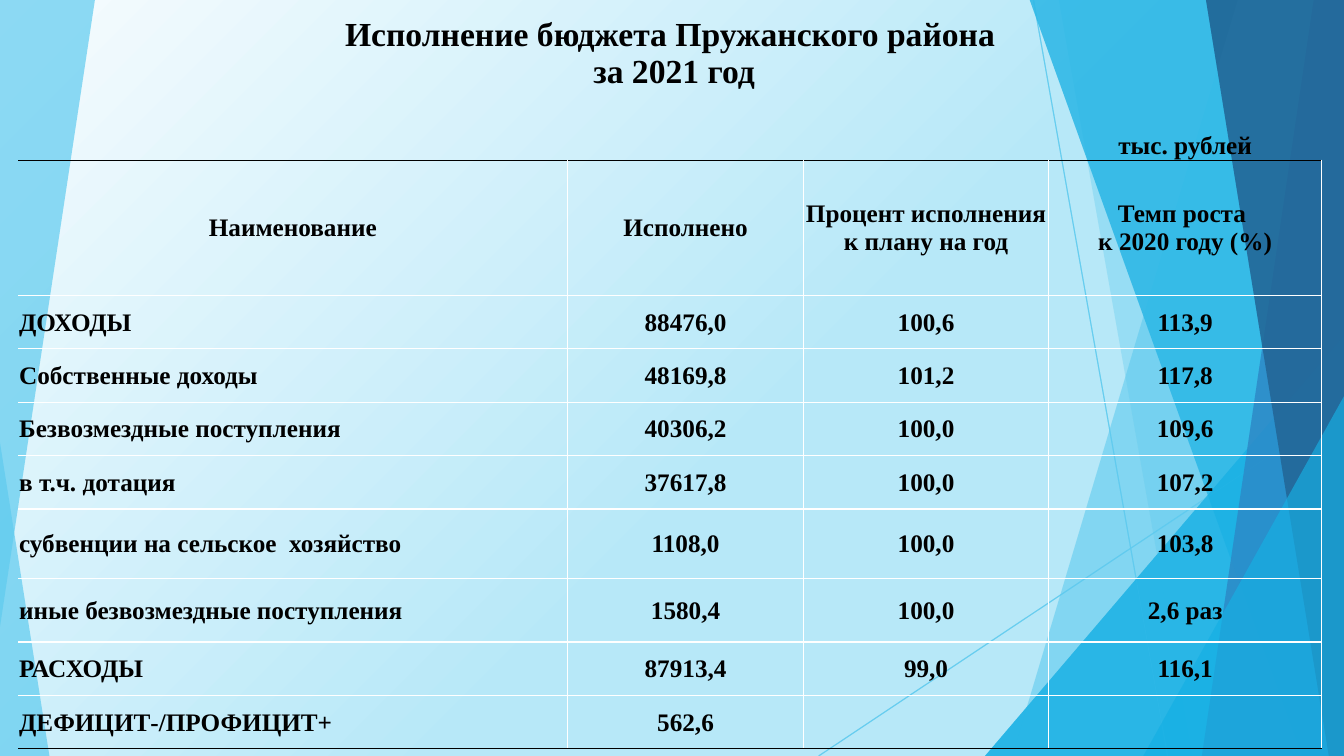
from lxml import etree
from pptx import Presentation
from pptx.dml.color import RGBColor
from pptx.enum import shapes, text
from pptx.oxml.ns import qn
from pptx.util import Inches, Pt

W, H, TOP = 13.33, 7.5, -0.01
FONT, BLACK, WHITE = "Times New Roman", "000000", "FFFFFF"


def paint(fill, colour, alpha=100):
    """Solid fill with an opacity in percent."""
    fill.solid()
    fill.fore_color.rgb = RGBColor.from_string(colour)
    if alpha < 100:
        clr = fill._xPr.find(".//" + qn("a:srgbClr"))
        etree.SubElement(clr, qn("a:alpha"), val=str(alpha * 1000))


def finish(sp, colour, alpha):
    paint(sp.fill, colour, alpha)
    sp.line.fill.background()
    sp.shadow.inherit = False


prs = Presentation()
prs.slide_width, prs.slide_height = Inches(W), Inches(H)
s = prs.slides.add_slide(prs.slide_layouts[6])

bg = s.background.fill
bg.gradient()
bg.gradient_angle = 315
for stop, (pos, colour) in zip(bg.gradient_stops, [(0, "F7FCFE"), (0.57, "B7E8F8")]):
    stop.position = pos
    stop.color.rgb = RGBColor.from_string(colour)

# Left edge
sp = s.shapes.add_shape(shapes.MSO_SHAPE.ISOSCELES_TRIANGLE, 0, Inches(4.39), Inches(0.49), Inches(3.11))
sp.adjustments[0] = 0
finish(sp, "5FCBEF", 70)
fb = s.shapes.build_freeform(0, 0)
fb.add_line_segments([(Inches(x), Inches(y)) for x, y in [(0.94, TOP), (0.94, 0.01), (0, 6.22)]])
finish(fb.convert_to_shape(), "5FCBEF", 70)

# Right side: panels give top and bottom x, triangles give left and top;
# all reach the right and bottom edges of the slide
facets = [
    ("panel", 12.28, 10.04, "5FCBEF", 36),
    ("panel", 10.5, 11.83, "5FCBEF", 20),
    ("triangle", 9.77, 3.33, "17B0E4", 66),
    ("panel", 10.21, 12.91, "17B0E4", 50),
    ("panel", 13.03, 11.92, "2E83C3", 70),
    ("panel", 11.96, 13.18, "226292", 80),
    ("triangle", 11.34, 3.93, "17B0E4", 66),
]
rays = [(10.25, 0, 11.58, H), (W, 4.03, 8.12, H)]
for layer in range(2):
    for ray in rays:
        cx = s.shapes.add_connector(shapes.MSO_CONNECTOR.STRAIGHT, *[Inches(v) for v in ray])
        cx.line.width = Pt(0.75)
        paint(cx.line.fill, "5FCBEF", 70)
        etree.SubElement(cx._element.spPr, qn("a:effectLst"))
    for kind, a, b, colour, alpha in facets:
        if kind == "panel":
            fb = s.shapes.build_freeform(Inches(a), Inches(TOP))
            fb.add_line_segments([(Inches(x), Inches(y)) for x, y in [(W, TOP), (W, H), (b, H)]])
            sp = fb.convert_to_shape()
        else:
            sp = s.shapes.add_shape(shapes.MSO_SHAPE.ISOSCELES_TRIANGLE,
                                    Inches(a), Inches(b), Inches(W - a), Inches(H - b))
            sp.adjustments[0] = 1
        finish(sp, colour, alpha)

# Budget table; "\v" is a line break, "\n" a new paragraph
rows = [
    (0.9, ["Исполнение бюджета Пружанского района\v за 2021 год", "", "", ""]),
    (0.34, ["", "", "", ""]),
    (0.35, ["", "", "", "тыс. рублей"]),
    (1.34, ["Наименование", "Исполнено", "Процент исполнения к плану на год",
            "Темп роста \nк 2020 году (%)"]),
    (0.53, ["ДОХОДЫ", "88476,0", "100,6", "113,9"]),
    (0.53, ["Собственные доходы", "48169,8", "101,2", "117,8"]),
    (0.53, ["Безвозмездные поступления", "40306,2", "100,0", "109,6"]),
    (0.53, ["в т.ч. дотация", "37617,8", "100,0", "107,2"]),
    (0.69, ["субвенции на сельское  хозяйство", "1108,0", "100,0", "103,8"]),
    (0.63, ["иные безвозмездные поступления", "1580,4", "100,0", "2,6 раз"]),
    (0.53, ["РАСХОДЫ", "87913,4", "99,0", "116,1"]),
    (0.53, ["ДЕФИЦИТ-/ПРОФИЦИТ+", "562,6", "", ""]),
]
cols = [5.45, 2.34, 2.43, 2.71]
UNITS, HEAD, LAST = 2, 3, len(rows) - 1
tbl = s.shapes.add_table(len(rows), len(cols), Inches(0.18), 0, Inches(12.93), Inches(7.43)).table
tbl.first_row = tbl.horz_banding = False
for col, width in zip(tbl.columns, cols):
    col.width = Inches(width)

for i, (height, values) in enumerate(rows):
    tbl.rows[i].height = Inches(height)
    for j, value in enumerate(values):
        cell = tbl.cell(i, j)
        cell.margin_left = cell.margin_right = cell.margin_top = Inches(0.01)
        cell.margin_bottom = 0
        cell.vertical_anchor = text.MSO_ANCHOR.MIDDLE if i >= HEAD else text.MSO_ANCHOR.BOTTOM

        borders = {}
        if i >= HEAD:
            borders = dict.fromkeys("RTB" if j == 0 else "LRTB", WHITE)
        if i == HEAD:
            borders["T"] = BLACK
        if i in (UNITS, LAST):
            borders["B"] = BLACK
        for side in "LRTB":
            ln = etree.SubElement(cell._tc.get_or_add_tcPr(), qn("a:ln" + side), w=str(Pt(1)))
            if side in borders:
                solid = etree.SubElement(ln, qn("a:solidFill"))
                etree.SubElement(solid, qn("a:srgbClr"), val=borders[side])
            else:
                etree.SubElement(ln, qn("a:noFill"))
        cell.fill.background()

        tf = cell.text_frame
        for k, para in enumerate(value.split("\n") if value else []):
            p = tf.add_paragraph() if k else tf.paragraphs[0]
            p.alignment = text.PP_ALIGN.LEFT if i > HEAD and j == 0 else text.PP_ALIGN.CENTER
            for n, part in enumerate(para.split("\v")):
                if n:
                    p.add_line_break()
                r = p.add_run()
                r.text = part
                r.font.name, r.font.bold = FONT, True
                r.font.size = Pt(24 if i == 0 else 18)
                r.font.color.rgb = RGBColor.from_string(BLACK)
tbl.cell(0, 0).merge(tbl.cell(0, 3))

prs.save("out.pptx")
